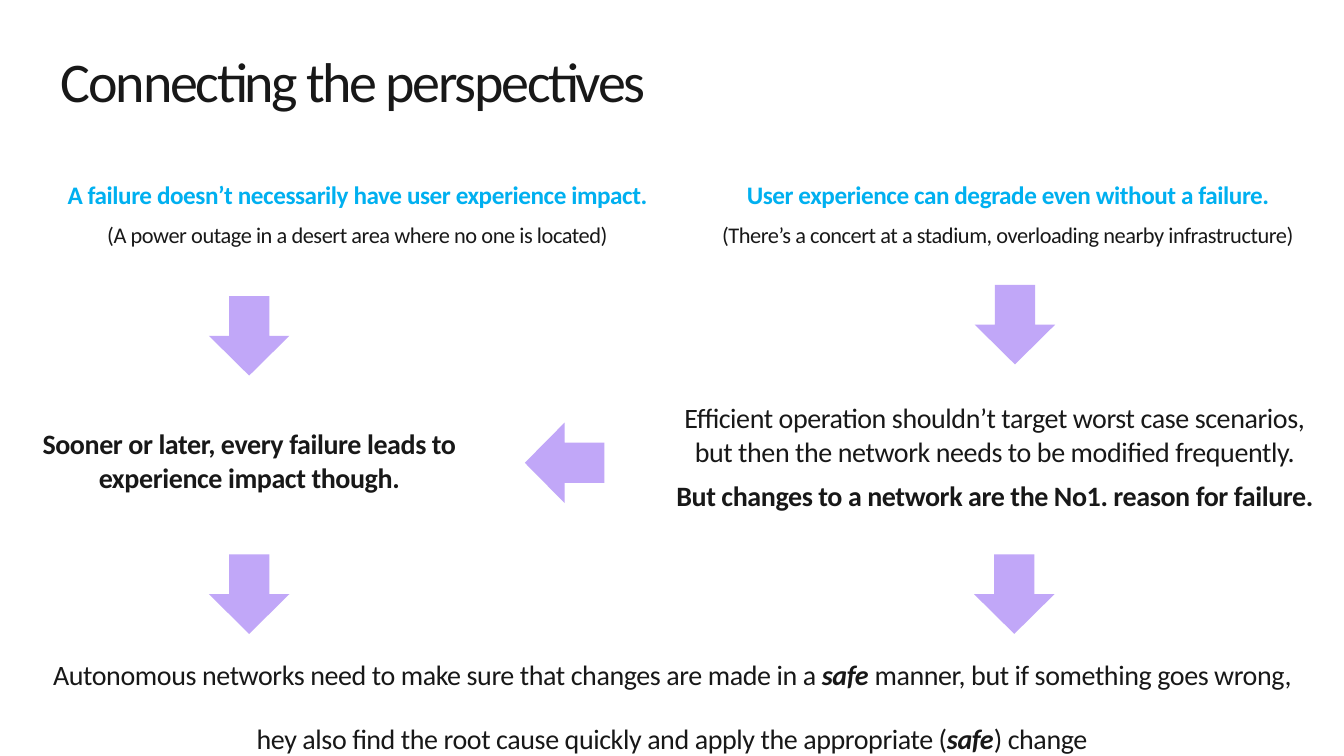
from pptx import Presentation
from pptx.dml.color import RGBColor
from pptx.enum.shapes import MSO_SHAPE
from pptx.enum.text import MSO_ANCHOR, MSO_AUTO_SIZE, PP_ALIGN
from pptx.util import Pt

INK = RGBColor(0x18, 0x18, 0x18)
SKY = RGBColor(0x00, 0xB0, 0xF0)
LILAC = RGBColor(0xC1, 0xA7, 0xF8)
DOWN_ARROW = MSO_SHAPE.DOWN_ARROW
TOP = MSO_ANCHOR.TOP
GROW, FIXED = MSO_AUTO_SIZE.SHAPE_TO_FIT_TEXT, MSO_AUTO_SIZE.NONE
LEFT, CENTER = PP_ALIGN.LEFT, PP_ALIGN.CENTER

HEADLINE = {"size": Pt(18), "bold": True, "color": SKY}
EXAMPLE = {"size": Pt(16), "bold": False, "color": INK}
BODY = {"size": Pt(20), "bold": False, "color": INK}
STRONG = {**BODY, "bold": True}
SAFE = {**STRONG, "italic": True}
TITLE = {"size": Pt(40), "bold": False, "color": INK}

TITLE_TEXT = "Connecting the perspectives"
PERSPECTIVES = [
    (15.3, [
        [("A failure doesn’t necessarily have user experience impact.", HEADLINE)],
        [("(A power outage in a desert area where no one is located)", EXAMPLE)],
    ]),
    (480, [
        [("User experience can degrade even without a failure.", HEADLINE)],
        [("(There’s a concert at a stadium, overloading nearby infrastructure)", EXAMPLE)],
    ]),
]
CONCLUSIONS = [
    (710.4, 283, 470, 87, [
        [("Efficient operation shouldn’t target worst case scenarios,\n"
          "but then the network needs to be modified frequently.", BODY)],
        [("But changes to a network are the No1. reason for failure.", STRONG)],
    ]),
    (178, 301.6, 310, 55, [
        [("Sooner or later, every failure leads to\nexperience impact though.", STRONG)],
    ]),
    (480, 466.6, 900, 55, [
        [("Autonomous networks need to make sure that changes are made in a ", BODY),
         ("safe", SAFE),
         (" manner, but if something goes wrong, \n"
          "hey also find the root cause quickly and apply the appropriate (", BODY),
         ("safe", SAFE),
         (") change", BODY)],
    ]),
]
ARROWS = [
    (178, 211.5, 0),
    (178, 396, 0),
    (725, 203.5, 0),
    (724.5, 396, 0),
    (403.3, 302.2, 90),
]
PERSPECTIVE_TOP, PERSPECTIVE_WIDTH, PERSPECTIVE_HEIGHT = 124.5, 480, 57
ARROW_WIDTH, ARROW_HEIGHT = 57.5, 56.8
INSETS = {
    "margin_left": Pt(6), "margin_right": Pt(6),
    "margin_top": Pt(3), "margin_bottom": Pt(3),
}


def add_span(para, text, style, tracking):
    span = para.add_run()
    span.text = text
    span.font.name = "Calibri"
    for name, value in style.items():
        if name == "color":
            span.font.color.rgb = value
        else:
            setattr(span.font, name, value)
    span.font._element.set("spc", str(tracking))


def fill_text(box, paragraphs, alignment=CENTER, tracking=-30, **frame_format):
    frame = box.text_frame
    for name, value in {"vertical_anchor": TOP, **frame_format}.items():
        setattr(frame, name, value)
    for index, spans in enumerate(paragraphs):
        para = frame.add_paragraph() if index else frame.paragraphs[0]
        para.alignment = alignment
        para.space_before = Pt(8 if index else 0)
        for text, style in spans:
            for row, line in enumerate(text.split("\n")):
                if row:
                    para.add_line_break()
                add_span(para, line, style, tracking)


deck = Presentation()
deck.slide_width, deck.slide_height = Pt(960), Pt(540)
page = deck.slides.add_slide(deck.slide_layouts[5])

title = page.shapes.title
title.left, title.top, title.width, title.height = map(Pt, (37.5, 37.5, 658, 85))
fill_text(title, [[(TITLE_TEXT, TITLE)]], LEFT, -160, word_wrap=True,
          auto_size=FIXED, **INSETS)
title.text_frame.paragraphs[0].line_spacing = 0.85

for left, paragraphs in PERSPECTIVES:
    box = page.shapes.add_textbox(Pt(left), Pt(PERSPECTIVE_TOP),
                                  Pt(PERSPECTIVE_WIDTH), Pt(PERSPECTIVE_HEIGHT))
    fill_text(box, paragraphs, word_wrap=True, auto_size=GROW)

for middle, top, width, height, paragraphs in CONCLUSIONS:
    box = page.shapes.add_textbox(Pt(middle - width / 2), Pt(top), Pt(width), Pt(height))
    fill_text(box, paragraphs, word_wrap=False, auto_size=GROW, **INSETS)

for middle, top, rotation in ARROWS:
    arrow = page.shapes.add_shape(DOWN_ARROW, Pt(middle - ARROW_WIDTH / 2), Pt(top),
                                  Pt(ARROW_WIDTH), Pt(ARROW_HEIGHT))
    arrow.rotation = rotation
    arrow.shadow.inherit = False
    arrow.fill.solid()
    arrow.fill.fore_color.rgb = LILAC
    arrow.line.fill.background()

deck.save("out.pptx")
